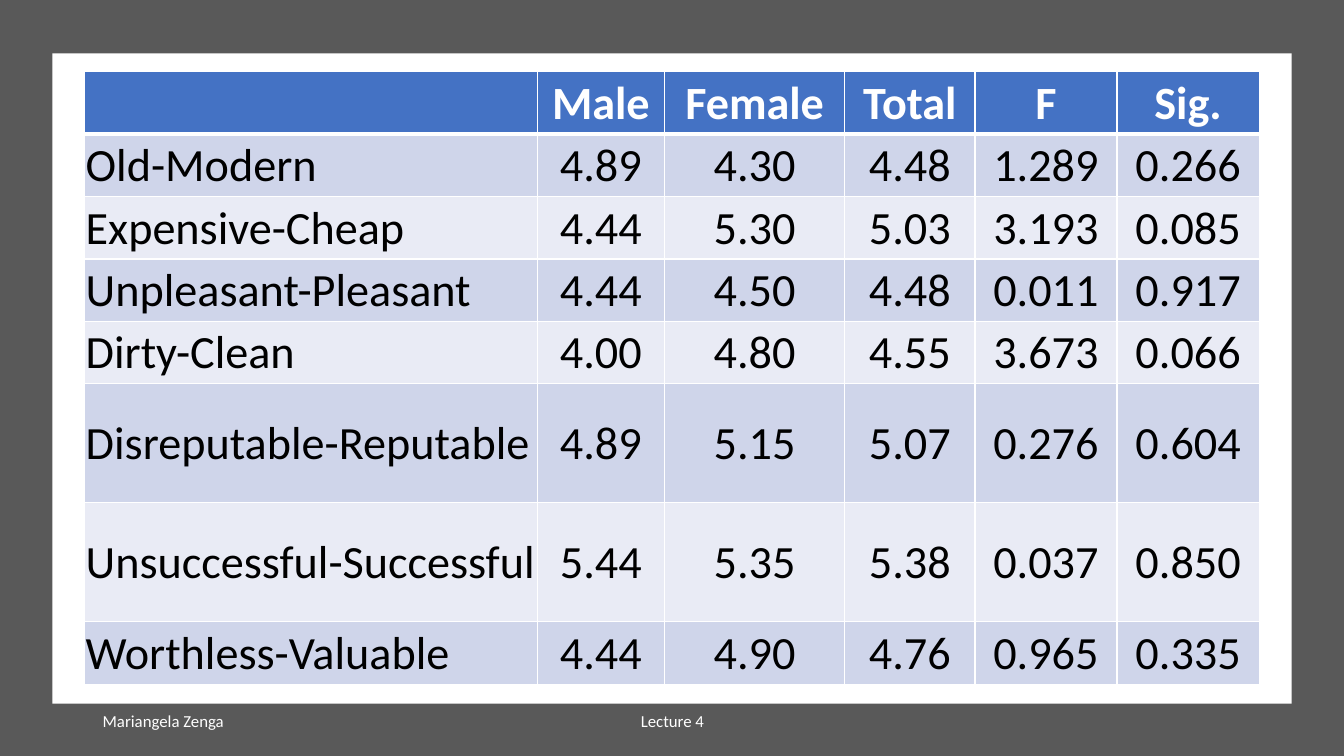
from dataclasses import dataclass

from lxml.etree import SubElement
from pptx import Presentation
from pptx.dml.color import RGBColor as Rgb
from pptx.enum.shapes import MSO_SHAPE as Preset
from pptx.enum.text import MSO_ANCHOR as Anchor, PP_ALIGN as Align
from pptx.oxml.ns import qn
from pptx.util import Inches, Pt


@dataclass(frozen=True)
class Theme:
    font: str = "Calibri"
    frame: str = "595959"
    white: str = "FFFFFF"
    ink: str = "000000"
    header: str = "4472C4"
    bands: tuple[str, str] = ("CFD5EA", "E9EBF5")
    table_size: int = 33
    footer_size: int = 12
    thin: int = 1
    thick: int = 3


@dataclass(frozen=True)
class Box:
    left: float
    top: float
    width: float
    height: float

    def emu(self) -> tuple:
        return tuple(Inches(v) for v in (self.left, self.top, self.width, self.height))


@dataclass(frozen=True)
class Panel:
    box: Box
    color: str


@dataclass(frozen=True)
class Footer:
    text: str
    box: Box
    align: Align


@dataclass(frozen=True)
class Row:
    label: str
    values: tuple[str, ...]
    height: float = 0.62


THEME = Theme()
PANELS = (
    Panel(Box(0, 0, 13.33, 7.5), THEME.frame),
    Panel(Box(0.52, 0.53, 12.29, 6.45), THEME.white),
)
FOOTERS = (
    Footer("Mariangela Zenga", Box(0.92, 6.95, 3, 0.4), Align.LEFT),
    Footer("Lecture 4", Box(4.42, 6.95, 4.5, 0.4), Align.CENTER),
)
COLUMN_WIDTHS = (4.49, 1.26, 1.79, 1.29, 1.41, 1.41)
RATINGS = (
    Row("", ("Male", "Female", "Total", "F", "Sig.")),
    Row("Old-Modern", ("4.89", "4.30", "4.48", "1.289", "0.266")),
    Row("Expensive-Cheap", ("4.44", "5.30", "5.03", "3.193", "0.085")),
    Row("Unpleasant-Pleasant", ("4.44", "4.50", "4.48", "0.011", "0.917")),
    Row("Dirty-Clean", ("4.00", "4.80", "4.55", "3.673", "0.066")),
    Row("Disreputable-Reputable", ("4.89", "5.15", "5.07", "0.276", "0.604"), 1.18),
    Row("Unsuccessful-Successful", ("5.44", "5.35", "5.38", "0.037", "0.850"), 1.18),
    Row("Worthless-Valuable", ("4.44", "4.90", "4.76", "0.965", "0.335")),
)


def write(frame, text: str, *, size: int, color: str, align: Align = Align.LEFT,
          bold: bool = False, space_after: int = 0) -> None:
    paragraph = frame.paragraphs[0]
    paragraph.alignment = align
    paragraph.space_after = Pt(space_after)
    run = paragraph.add_run()
    run.text = text
    run.font.name = THEME.font
    run.font.size = Pt(size)
    run.font.bold = bold
    run.font.color.rgb = Rgb.from_string(color)


def draw_panel(slide, panel: Panel) -> None:
    shape = slide.shapes.add_shape(Preset.RECTANGLE, *panel.box.emu())
    shape.shadow.inherit = False
    shape.fill.solid()
    shape.fill.fore_color.rgb = Rgb.from_string(panel.color)
    shape.line.fill.background()


def draw_footer(slide, footer: Footer) -> None:
    frame = slide.shapes.add_textbox(*footer.box.emu()).text_frame
    frame.word_wrap = True
    frame.vertical_anchor = Anchor.MIDDLE
    write(frame, footer.text, size=THEME.footer_size, color=THEME.white,
          align=footer.align, space_after=6)


def set_borders(cell, top: int, bottom: int) -> None:
    properties = cell._tc.get_or_add_tcPr()
    sides = {"lnL": THEME.thin, "lnR": THEME.thin, "lnT": top, "lnB": bottom}
    for side, points in sides.items():
        line = SubElement(properties, qn(f"a:{side}"), w=str(Pt(points)))
        SubElement(SubElement(line, qn("a:solidFill")), qn("a:srgbClr"), val=THEME.white)


def draw_cell(cell, text: str, row: int, column: int) -> None:
    is_header = row == 0
    set_borders(cell, THEME.thick if row == 1 else THEME.thin,
                THEME.thick if is_header else THEME.thin)
    cell.fill.solid()
    cell.fill.fore_color.rgb = Rgb.from_string(
        THEME.header if is_header else THEME.bands[(row - 1) % 2])
    cell.margin_left = cell.margin_right = cell.margin_top = Inches(0.01)
    cell.margin_bottom = 0
    cell.vertical_anchor = Anchor.MIDDLE
    if text:
        write(cell.text_frame, text, size=THEME.table_size, bold=is_header,
              color=THEME.white if is_header else THEME.ink,
              align=Align.CENTER if column else Align.LEFT)


def draw_ratings(slide, left: float, top: float) -> None:
    box = Box(left, top, sum(COLUMN_WIDTHS), sum(row.height for row in RATINGS))
    table = slide.shapes.add_table(len(RATINGS), len(COLUMN_WIDTHS), *box.emu()).table
    for column, width in zip(table.columns, COLUMN_WIDTHS):
        column.width = Inches(width)
    for r, rating in enumerate(RATINGS):
        table.rows[r].height = Inches(rating.height)
        for c, text in enumerate((rating.label, *rating.values)):
            draw_cell(table.cell(r, c), text, r, c)


def main() -> None:
    deck = Presentation()
    deck.slide_width, deck.slide_height = Inches(13.33), Inches(7.5)
    slide = deck.slides.add_slide(deck.slide_layouts[6])

    # Grey frame and white page
    for panel in PANELS:
        draw_panel(slide, panel)

    # Author and lecture
    for footer in FOOTERS:
        draw_footer(slide, footer)

    # Mean ratings by gender
    draw_ratings(slide, 0.84, 0.71)

    deck.save("out.pptx")


if __name__ == "__main__":
    main()
